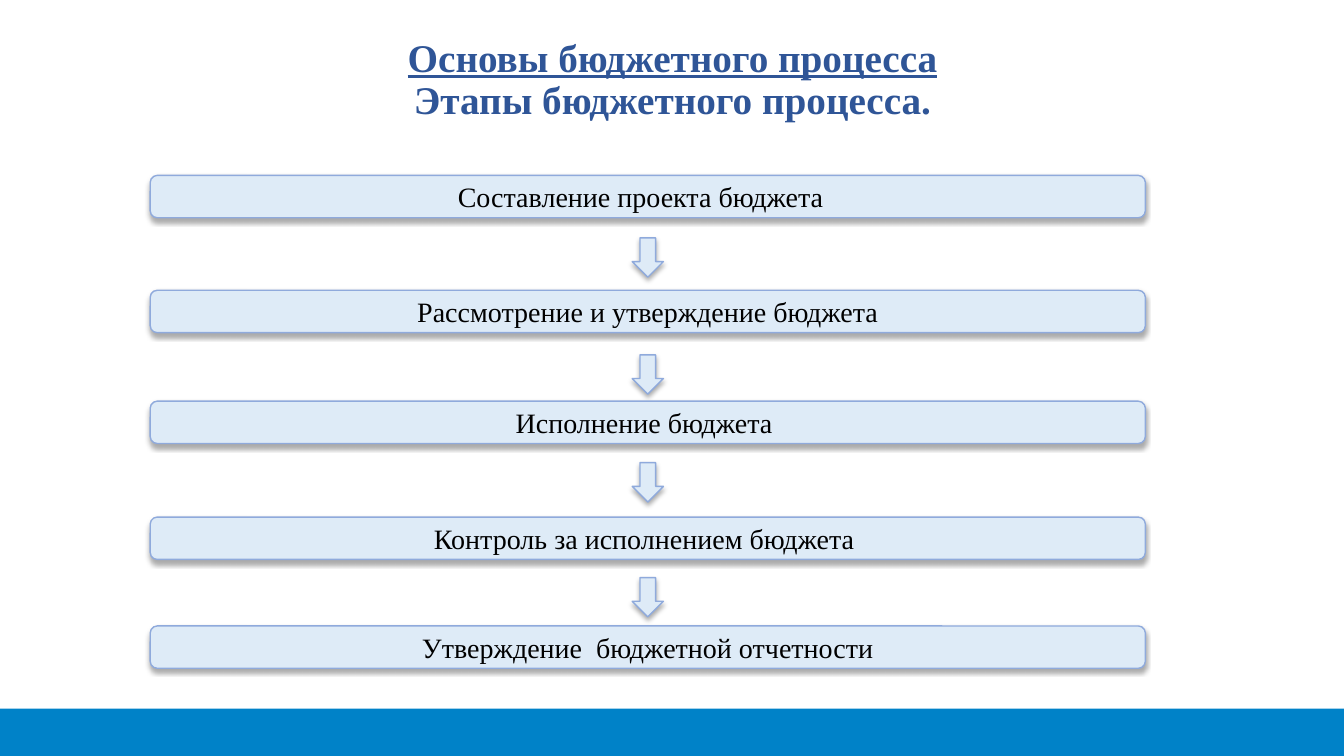
from lxml import etree
from pptx import Presentation, util as u
from pptx.dml.color import RGBColor
from pptx.enum import shapes, text
from pptx.oxml import parse_xml

COLORS = {"footer": "0082C8", "heading": "2F5597", "fill": "DEEBF7",
          "edge": "8FAADC", "ink": "000000"}
FONT = "Times New Roman"
SHADOW = (
    '<a:effectLst xmlns:a="http://schemas.openxmlformats.org/drawingml/2006/main">'
    '<a:outerShdw blurRad="44450" dist="27940" dir="5400000" algn="ctr" rotWithShape="0">'
    '<a:srgbClr val="000000"><a:alpha val="32000"/></a:srgbClr>'
    '</a:outerShdw></a:effectLst>'
)


def style_run(run, color, **formats):
    run.font.color.rgb = RGBColor.from_string(COLORS[color])
    for name, value in {"name": FONT, **formats}.items():
        setattr(run.font, name, value)


def add_block(kind, left, top, width, height, fill, edge=None):
    block = slide.shapes.add_shape(kind, *map(u.Inches, (left, top, width, height)))
    block.shadow.inherit = False
    block.fill.solid()
    block.fill.fore_color.rgb = RGBColor.from_string(COLORS[fill])
    if edge is None:
        block.line.fill.background()
        return block
    block.line.color.rgb = RGBColor.from_string(COLORS[edge])
    block.line.width = u.Pt(1)
    properties = block.element.spPr
    properties.replace(properties.find("{*}effectLst"), parse_xml(SHADOW))
    return block


deck = Presentation()
deck.slide_width, deck.slide_height = u.Inches(13.33), u.Inches(7.5)
slide = deck.slides.add_slide(deck.slide_layouts[5])

add_block(shapes.MSO_SHAPE.RECTANGLE, 0, 7.03, 13.33, 0.47, "footer")

heading = slide.shapes.title
for name, value in {"left": 0.92, "top": 0.21, "width": 11.5, "height": 1.18}.items():
    setattr(heading, name, u.Inches(value))
heading.text_frame.word_wrap = True
heading.text_frame.vertical_anchor = text.MSO_ANCHOR.MIDDLE
heading_lines = heading.text_frame.paragraphs[0]
heading_lines.alignment = text.PP_ALIGN.CENTER
heading_lines.line_spacing = 0.9
for wording, underlined in (("Основы бюджетного процесса", True),
                            ("Этапы бюджетного процесса.", False)):
    if heading_lines.runs:
        heading_lines.add_line_break()
    style_run(heading_lines.add_run(), "heading",
              size=u.Pt(28), bold=True, underline=underlined)
    heading_lines.runs[-1].text = wording

BAR_LEFT, BAR_WIDTH, BAR_HEIGHT = 1.49, 9.87, 0.42
ARROW_WIDTH, ARROW_HEIGHT = 0.31, 0.39
arrow_left = BAR_LEFT + (BAR_WIDTH - ARROW_WIDTH) / 2
stages = [
    ("Составление проекта бюджета", 1.74, 2.36, 0.24),
    ("Рассмотрение и утверждение бюджета", 2.88, 3.52, 0.1),
    ("Исполнение бюджета", 3.98, 4.59, 0.17),
    ("Контроль за исполнением бюджета", 5.13, 5.73, 0.17),
    ("Утверждение  бюджетной отчетности", 6.21, None, 0.1),
]
for wording, bar_top, arrow_top, right_inset in stages:
    stage = add_block(shapes.MSO_SHAPE.ROUNDED_RECTANGLE, BAR_LEFT, bar_top,
                      BAR_WIDTH, BAR_HEIGHT, "fill", "edge")
    frame = stage.text_frame
    for name, value in {"word_wrap": True, "margin_right": u.Inches(right_inset),
                        "vertical_anchor": text.MSO_ANCHOR.MIDDLE}.items():
        setattr(frame, name, value)
    label = frame.paragraphs[0]
    label.alignment = text.PP_ALIGN.CENTER
    style_run(label.add_run(), "ink", size=u.Pt(20))
    label.runs[0].text = wording
    if arrow_top:
        add_block(shapes.MSO_SHAPE.DOWN_ARROW, arrow_left, arrow_top,
                  ARROW_WIDTH, ARROW_HEIGHT, "fill", "edge")

deck.save("out.pptx")
